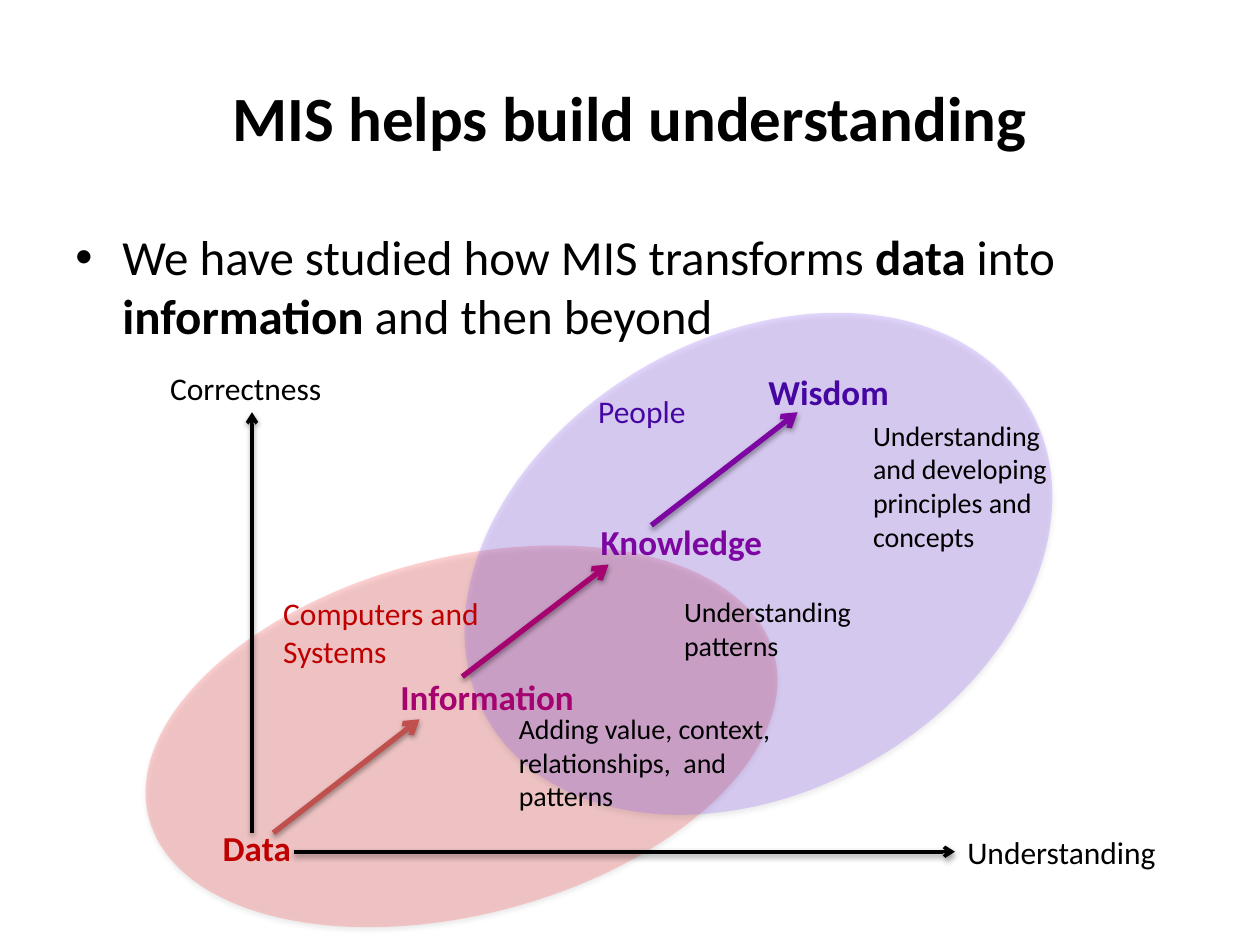
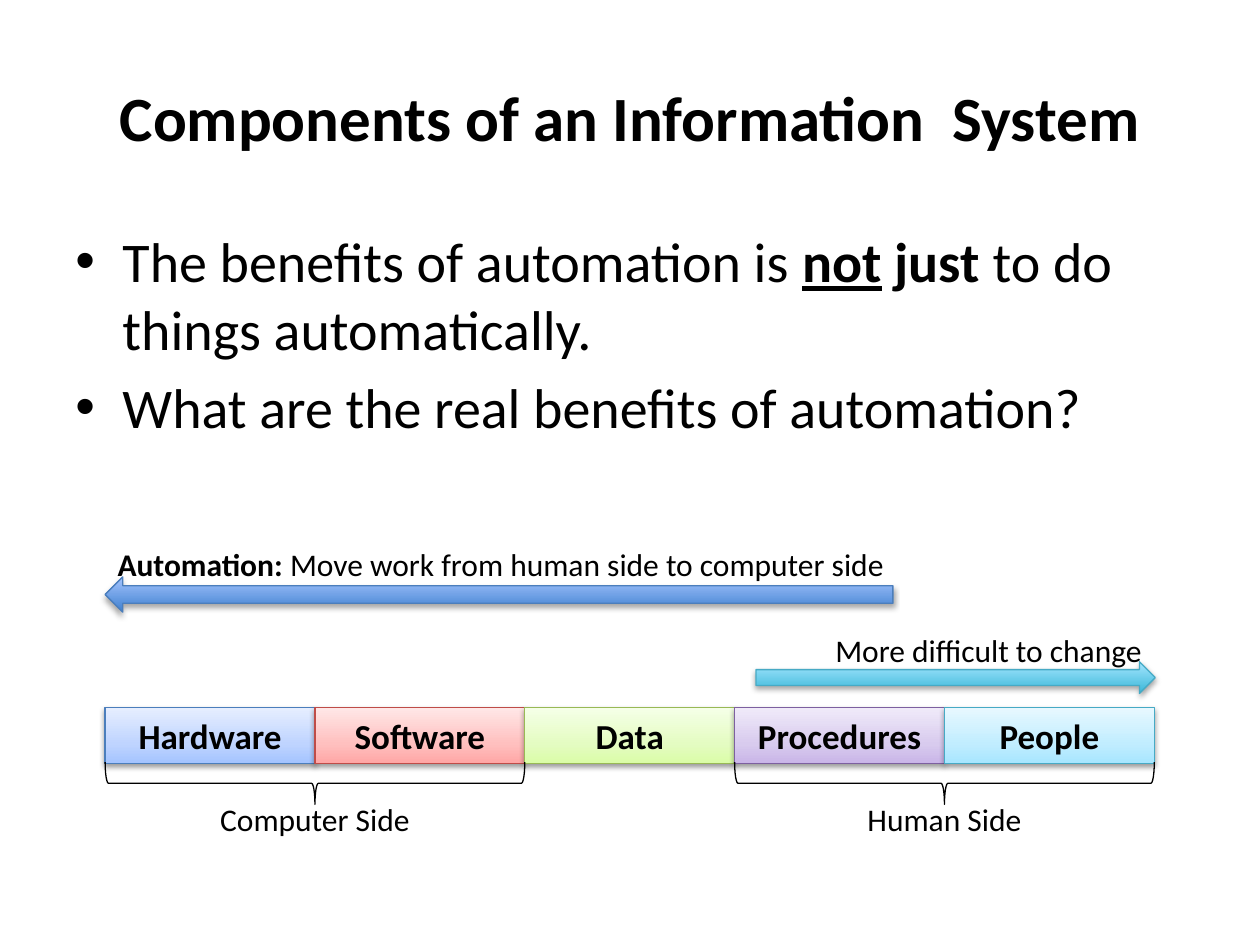
from dataclasses import dataclass
from typing import Optional

from lxml import etree
from pptx import Presentation
from pptx.dml.color import RGBColor
from pptx.enum.shapes import MSO_CONNECTOR, MSO_SHAPE
from pptx.enum.text import MSO_ANCHOR, PP_ALIGN
from pptx.oxml.ns import qn
from pptx.util import Cm, Pt

LEFT, CENTER, RIGHT = PP_ALIGN.LEFT, PP_ALIGN.CENTER, PP_ALIGN.RIGHT
MIDDLE, TOP = MSO_ANCHOR.MIDDLE, MSO_ANCHOR.TOP
OVAL, RECTANGLE, BRACE = MSO_SHAPE.OVAL, MSO_SHAPE.RECTANGLE, MSO_SHAPE.LEFT_BRACE
LEFT_ARROW, RIGHT_ARROW = MSO_SHAPE.LEFT_ARROW, MSO_SHAPE.RIGHT_ARROW
STRAIGHT = MSO_CONNECTOR.STRAIGHT

FONT = "Calibri"
TITLE_ONLY = 5
TITLE_BOX = (1.27, 0.76, 22.86, 3.18)
BODY_LEFT, BODY_TOP, BODY_WIDTH = 1.27, 4.45, 22.86
BAND_LEFT, BAND_TOP, BAND_HEIGHT, CELL_WIDTH = 2.12, 14.27, 1.12, 4.23
BAND_WIDTH = 5 * CELL_WIDTH
BRACE_DEPTH, BRACE_CENTER, SIDE_LABEL_TOP = 0.85, 15.79, 16.0

COLORS = {
    "black": "000000",
    "computers": "FF5050",
    "people": "9966FF",
    "data": "C00000",
    "data_arrow": "C0504D",
    "information": "A5036F",
    "knowledge": "7D06A2",
    "wisdom": "4506A2",
    "blue_line": "4B7EBC",
    "red_line": "BF4C48",
    "green_line": "98B955",
    "purple_line": "7D60A0",
    "aqua_line": "46AAC5",
}
GRADIENTS = {
    "blue": {0: "A4C4FF", 35: "BFD4FF", 100: "E6EEFF"},
    "red": {0: "FFA6A5", 35: "FFC0BF", 100: "FFE7E7"},
    "green": {0: "DAFDA7", 35: "E4FCC2", 100: "F5FFE7"},
    "purple": {0: "C9B5E8", 35: "D8CBEE", 100: "F0EAF9"},
    "aqua": {0: "A7E6FF", 35: "C1EDFF", 100: "E7F8FF"},
    "blue_arrow": {0: "3F80CE", 100: "A4C4FF"},
    "aqua_arrow": {0: "39B7D8", 100: "A7E6FF"},
}


@dataclass(frozen=True)
class Run:
    text: str
    bold: bool = False
    underline: bool = False


@dataclass(frozen=True)
class Label:
    text: str
    box: tuple
    size: int = 18
    color: str = "black"
    bold: bool = False


@dataclass(frozen=True)
class Arrow:
    start: tuple
    end: tuple
    color: str = "black"
    width: float = 2


@dataclass(frozen=True)
class Ellipse:
    box: tuple
    rotation: float
    color: str


@dataclass(frozen=True)
class Component:
    name: str
    hue: str


@dataclass(frozen=True)
class BlockArrow:
    kind: int
    box: tuple
    hue: str


ELLIPSES = [
    Ellipse((2.79, 11.25, 13.03, 7.19), 345.4, "computers"),
    Ellipse((8.99, 6.78, 12.6, 9.17), 330.3, "people"),
]
UNDERSTANDING_LABELS = [
    Label("Data", (4.24, 16.54, 2.97, 1.12), 20, "data", True),
    Label("Information", (7.82, 13.49, 4.01, 1.12), 20, "information", True),
    Label("Knowledge", (11.86, 10.36, 4.01, 1.12), 20, "knowledge", True),
    Label("Wisdom", (15.24, 7.34, 4.01, 1.12), 20, "wisdom", True),
    Label("Understanding", (19.25, 16.66, 4.55, 1.02)),
    Label("Correctness", (3.18, 7.32, 4.01, 1.02)),
    Label("Adding value, context, relationships,  and patterns", (10.21, 14.22, 5.66, 2.31), 16),
    Label("Understanding patterns", (13.54, 11.86, 4.98, 1.63), 16),
    Label("Understanding \nand developing principles and concepts", (17.35, 8.31, 4.98, 3.0), 16),
    Label("Computers and Systems", (5.46, 11.86, 5.13, 1.8), color="data"),
    Label("People", (11.81, 7.77, 5.13, 1.02), color="wisdom"),
]
ARROWS = [
    Arrow((5.51, 16.79), (8.46, 14.5), "data_arrow", 3),
    Arrow((5.92, 17.17), (19.25, 17.17)),
    Arrow((5.08, 16.79), (5.08, 8.31)),
    Arrow((9.32, 13.64), (12.27, 11.38), "information", 3),
    Arrow((13.13, 10.59), (16.08, 8.31), "knowledge", 3),
]
COMPONENTS = [
    Component("Hardware", "blue"),
    Component("Software", "red"),
    Component("Data", "green"),
    Component("Procedures", "purple"),
    Component("People", "aqua"),
]
SIDES = {"Computer Side": 0, "Human Side": 3}
BLOCK_ARROWS = [
    BlockArrow(RIGHT_ARROW, (15.24, 13.34, 8.05, 0.64), "aqua"),
    BlockArrow(LEFT_ARROW, (2.12, 11.63, 15.88, 0.71), "blue"),
]


def lengths(values: tuple) -> list:
    return [Cm(value) for value in values]


def rgb(name: str) -> RGBColor:
    return RGBColor.from_string(COLORS[name])


def apply_formats(target, formats: dict) -> None:
    for name, value in formats.items():
        setattr(target, name, value)


def add_element(parent, tag: str, **attributes):
    return etree.SubElement(parent, qn(tag), {key: str(value) for key, value in attributes.items()})


def add_shadow(effects, opacity: int = 38, distance: int = 20000) -> None:
    shadow = add_element(effects, "a:outerShdw", blurRad=40000, dist=distance, dir=5400000, rotWithShape=0)
    color = add_element(shadow, "a:srgbClr", val=COLORS["black"])
    add_element(color, "a:alpha", val=opacity * 1000)


def write_runs(paragraph, runs: list, size: int, color: str = "black", alignment=LEFT) -> None:
    paragraph.alignment = alignment
    for item in runs:
        for index, line in enumerate(item.text.split("\n")):
            if index:
                paragraph.add_line_break()
            run = paragraph.add_run()
            run.text = line
            formats = {"name": FONT, "size": Pt(size), "bold": item.bold, "underline": item.underline}
            apply_formats(run.font, formats)
            run.font.color.rgb = rgb(color)


def add_text(shapes, box: tuple, runs: list, size: int = 18, color: str = "black", alignment=LEFT) -> None:
    frame = shapes.add_textbox(*lengths(box)).text_frame
    frame.word_wrap = True
    write_runs(frame.paragraphs[0], runs, size, color, alignment)


def add_titled_slide(presentation, text: str):
    slide = presentation.slides.add_slide(presentation.slide_layouts[TITLE_ONLY])
    title = slide.shapes.title
    apply_formats(title, dict(zip(("left", "top", "width", "height"), lengths(TITLE_BOX))))
    title.text_frame.vertical_anchor = MIDDLE
    write_runs(title.text_frame.paragraphs[0], [Run(text, bold=True)], 36, alignment=CENTER)
    return slide


def add_bullets(shapes, height: float, bullets: list, size: int) -> None:
    frame = shapes.add_textbox(*lengths((BODY_LEFT, BODY_TOP, BODY_WIDTH, height))).text_frame
    apply_formats(frame, {"word_wrap": True, "vertical_anchor": TOP})
    for index, runs in enumerate(bullets):
        paragraph = frame.add_paragraph() if index else frame.paragraphs[0]
        write_runs(paragraph, runs, size)
        paragraph.space_before = Pt(round(size * 0.2, 1))
        properties = paragraph._p.get_or_add_pPr()
        properties.set("marL", str(Cm(0.95)))
        properties.set("indent", str(-Cm(0.95)))
        add_element(properties, "a:buFont", typeface="Arial")
        add_element(properties, "a:buChar", char="•")


def add_plain_shape(shapes, kind, box: tuple, line_color: Optional[str] = None):
    shape = shapes.add_shape(kind, *lengths(box))
    shape.shadow.inherit = False
    if line_color:
        shape.line.color.rgb = rgb(line_color)
        shape.line.width = Pt(0.75)
    else:
        shape.line.fill.background()
    return shape


def shade_shape(shape, opacity: int, distance: int) -> None:
    add_shadow(shape._element.spPr.find(qn("a:effectLst")), opacity, distance)


def add_ellipse(shapes, ellipse: Ellipse) -> None:
    shape = add_plain_shape(shapes, OVAL, ellipse.box)
    shape.rotation = ellipse.rotation
    shape.fill.solid()
    shape.fill.fore_color.rgb = rgb(ellipse.color)
    color = shape._element.spPr.find(qn("a:solidFill")).find(qn("a:srgbClr"))
    add_element(color, "a:alpha", val=25000)
    shade_shape(shape, 35, 23000)


def add_gradient_shape(shapes, kind, box: tuple, gradient: str, line_color: str):
    shape = add_plain_shape(shapes, kind, box, line_color)
    shape.fill.gradient()
    shape.fill.gradient_angle = 90
    stops = shape._element.spPr.find(qn("a:gradFill")).find(qn("a:gsLst"))
    for stop in list(stops):
        stops.remove(stop)
    for position, color in GRADIENTS[gradient].items():
        stop = add_element(stops, "a:gs", pos=position * 1000)
        add_element(stop, "a:srgbClr", val=color)
    return shape


def add_arrow(shapes, arrow: Arrow) -> None:
    connector = shapes.add_connector(STRAIGHT, *lengths(arrow.start + arrow.end))
    connector.line.color.rgb = rgb(arrow.color)
    connector.line.width = Pt(arrow.width)
    properties = connector._element.spPr
    add_element(properties.find(qn("a:ln")), "a:tailEnd", type="arrow")
    add_shadow(add_element(properties, "a:effectLst"))


def add_component(shapes, index: int, component: Component) -> None:
    box = (BAND_LEFT + index * CELL_WIDTH, BAND_TOP, CELL_WIDTH, BAND_HEIGHT)
    shape = add_gradient_shape(shapes, RECTANGLE, box, component.hue, f"{component.hue}_line")
    shade_shape(shape, 38, 20000)
    shape.text_frame.vertical_anchor = MIDDLE
    write_runs(shape.text_frame.paragraphs[0], [Run(component.name, bold=True)], 20, alignment=CENTER)


def add_side(shapes, name: str, first_cell: int) -> None:
    group = shapes.add_group_shape().shapes
    left, width = BAND_LEFT + first_cell * CELL_WIDTH, 2 * CELL_WIDTH
    box = (left + (width - BRACE_DEPTH) / 2, BRACE_CENTER - width / 2, BRACE_DEPTH, width)
    brace = add_plain_shape(group, BRACE, box, "black")
    brace.fill.background()
    brace.rotation = 270
    brace.adjustments[0], brace.adjustments[1] = 0.08, 0.5
    add_text(group, (left, SIDE_LABEL_TOP, width, 1.02), [Run(name)], alignment=CENTER)


def build_understanding(presentation) -> None:
    shapes = add_titled_slide(presentation, "MIS helps build understanding").shapes
    for ellipse in ELLIPSES:
        add_ellipse(shapes, ellipse)
    add_bullets(shapes, 3.33, [[
        Run("We have studied how MIS transforms "), Run("data", bold=True), Run(" into "),
        Run("information", bold=True), Run(" and then beyond"),
    ]], 28)
    for label in UNDERSTANDING_LABELS:
        add_text(shapes, label.box, [Run(label.text, label.bold)], label.size, label.color)
    for arrow in ARROWS:
        add_arrow(shapes, arrow)


def build_components(presentation) -> None:
    shapes = add_titled_slide(presentation, "Components of an Information  System").shapes
    add_bullets(shapes, 12.57, [
        [Run("The benefits of automation is "), Run("not", bold=True, underline=True),
         Run(" just ", bold=True), Run("to do things automatically.")],
        [Run("What are the real benefits of automation?")],
    ], 32)
    for index, component in enumerate(COMPONENTS):
        add_component(shapes, index, component)
    for name, first_cell in SIDES.items():
        add_side(shapes, name, first_cell)
    add_text(shapes, (BAND_LEFT, 10.87, BAND_WIDTH, 1.02),
             [Run("Automation: ", bold=True), Run("Move work from human side to computer side")])
    add_text(shapes, (BAND_LEFT, 12.6, BAND_WIDTH, 1.02), [Run("More difficult to change")], alignment=RIGHT)
    for arrow in BLOCK_ARROWS:
        shape = add_gradient_shape(shapes, arrow.kind, arrow.box, f"{arrow.hue}_arrow", f"{arrow.hue}_line")
        shade_shape(shape, 35, 23000)


def main() -> None:
    presentation = Presentation()
    presentation.slide_width, presentation.slide_height = Cm(25.4), Cm(19.05)
    build_understanding(presentation)
    build_components(presentation)
    presentation.save("out.pptx")


if __name__ == "__main__":
    main()
